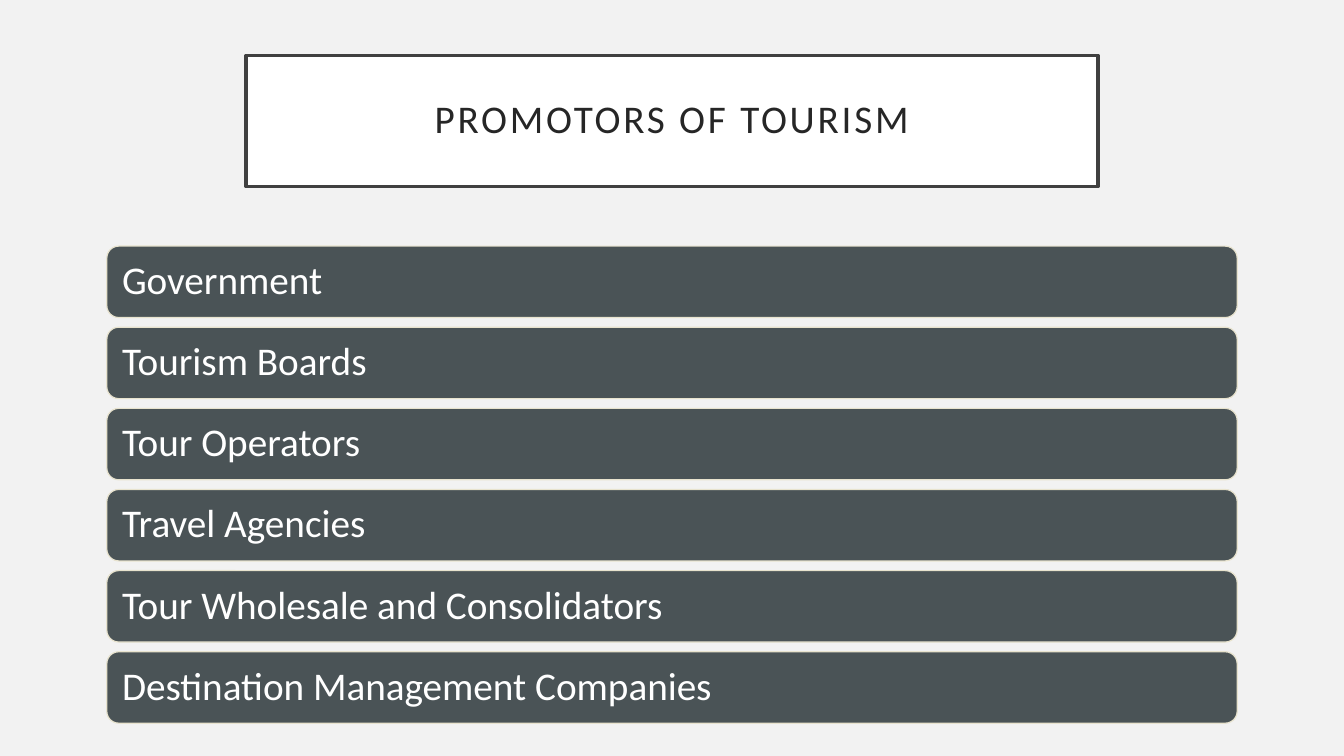
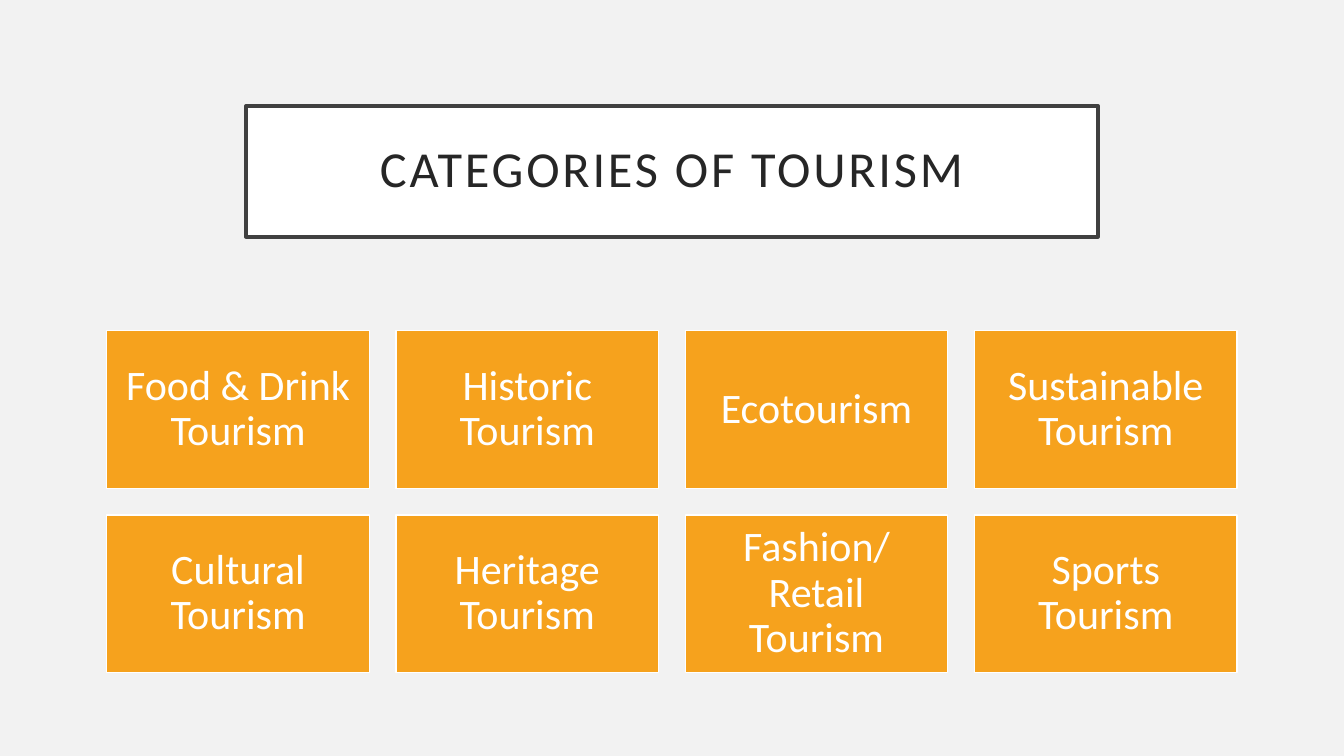
"""Build two slides on the promotors and the categories of tourism."""
from pptx import Presentation
from pptx.dml.color import RGBColor
from pptx.enum.shapes import MSO_SHAPE
from pptx.enum.text import MSO_ANCHOR, MSO_AUTO_SIZE, PP_ALIGN
from pptx.util import Pt

RECT, ROUNDED = MSO_SHAPE.RECTANGLE, MSO_SHAPE.ROUNDED_RECTANGLE
LEFT, CENTER = PP_ALIGN.LEFT, PP_ALIGN.CENTER
MIDDLE, NO_AUTOFIT = MSO_ANCHOR.MIDDLE, MSO_AUTO_SIZE.NONE

FONT = "Calibri"
BACKGROUND, WHITE = "F2F2F2", "FFFFFF"
TITLE_TEXT, TITLE_LINE = "262626", "404040"
SLATE, SAND, ORANGE = "4A5356", "E8E3CE", "F6A21D"
SLIDE_W, SLIDE_H = 960, 540
TITLE_W, TITLE_H = 608.6, 93.6
GRID_LEFT = 76.3
GRID_W = SLIDE_W - 2 * GRID_LEFT
TITLE_ONLY = 5

SLIDES = [
    {
        "title": "PROMOTORS OF TOURISM", "title_top": 39.6, "title_size": 28,
        "items": ["Government", "Tourism Boards", "Tour Operators",
                  "Travel Agencies", "Tour Wholesale and Consolidators",
                  "Destination Management Companies"],
        "grid": {"columns": 1, "top": 175.8, "height": 51, "gap": 6.95},
        "look": {"outline": ROUNDED, "fill": SLATE, "line": SAND,
                 "size": 28, "align": LEFT},
    },
    {
        "title": "CATEGORIES OF TOURISM", "title_top": 75.6, "title_size": 36,
        "items": ["Food & Drink Tourism", "Historic Tourism", "Ecotourism",
                  "Sustainable Tourism", "Cultural Tourism",
                  "Heritage Tourism", "Fashion/Retail Tourism",
                  "Sports Tourism"],
        "grid": {"columns": 4, "top": 236.3, "height": 112.5, "gap": 19},
        "look": {"outline": RECT, "fill": ORANGE, "line": WHITE,
                 "size": 30, "align": CENTER},
    },
]


def rgb(code):
    return RGBColor.from_string(code)


def paint(shape, fill, line, width):
    shape.fill.solid()
    shape.fill.fore_color.rgb = rgb(fill)
    shape.line.color.rgb = rgb(line)
    shape.line.width = Pt(width)


def write(shape, text, size, color, align, inset):
    frame = shape.text_frame
    frame.text = text
    frame.word_wrap = True
    frame.auto_size = NO_AUTOFIT
    frame.vertical_anchor = MIDDLE
    frame.margin_left = frame.margin_right = Pt(inset)
    frame.margin_top = frame.margin_bottom = Pt(inset)
    paragraph = frame.paragraphs[0]
    paragraph.alignment = align
    paragraph.line_spacing = 0.9
    font = paragraph.runs[0].font
    font.name, font.size = FONT, Pt(size)
    font.color.rgb = rgb(color)
    return font


def add_title(slide, text, top, size):
    title = slide.shapes.title
    title.left, title.top = Pt((SLIDE_W - TITLE_W) / 2), Pt(top)
    title.width, title.height = Pt(TITLE_W), Pt(TITLE_H)
    paint(title, WHITE, TITLE_LINE, 2.5)
    font = write(title, text, size, TITLE_TEXT, CENTER, 14.4)
    font._element.set("spc", "200")


def add_grid(slide, items, columns, top, height, gap, look):
    width = (GRID_W - (columns - 1) * gap) / columns
    for index, label in enumerate(items):
        row, column = divmod(index, columns)
        tile = slide.shapes.add_shape(
            look["outline"],
            Pt(GRID_LEFT + column * (width + gap)),
            Pt(top + row * (height + gap)), Pt(width), Pt(height))
        tile.shadow.inherit = False
        paint(tile, look["fill"], look["line"], 0.85)
        write(tile, label, look["size"], WHITE, look["align"], 8.4)


def main():
    deck = Presentation()
    deck.slide_width, deck.slide_height = Pt(SLIDE_W), Pt(SLIDE_H)
    backdrop = deck.slide_master.background.fill
    backdrop.solid()
    backdrop.fore_color.rgb = rgb(BACKGROUND)
    for content in SLIDES:
        slide = deck.slides.add_slide(deck.slide_layouts[TITLE_ONLY])
        add_title(slide, content["title"], content["title_top"],
                  content["title_size"])
        add_grid(slide, content["items"], look=content["look"],
                 **content["grid"])
    deck.save("out.pptx")


if __name__ == "__main__":
    main()
